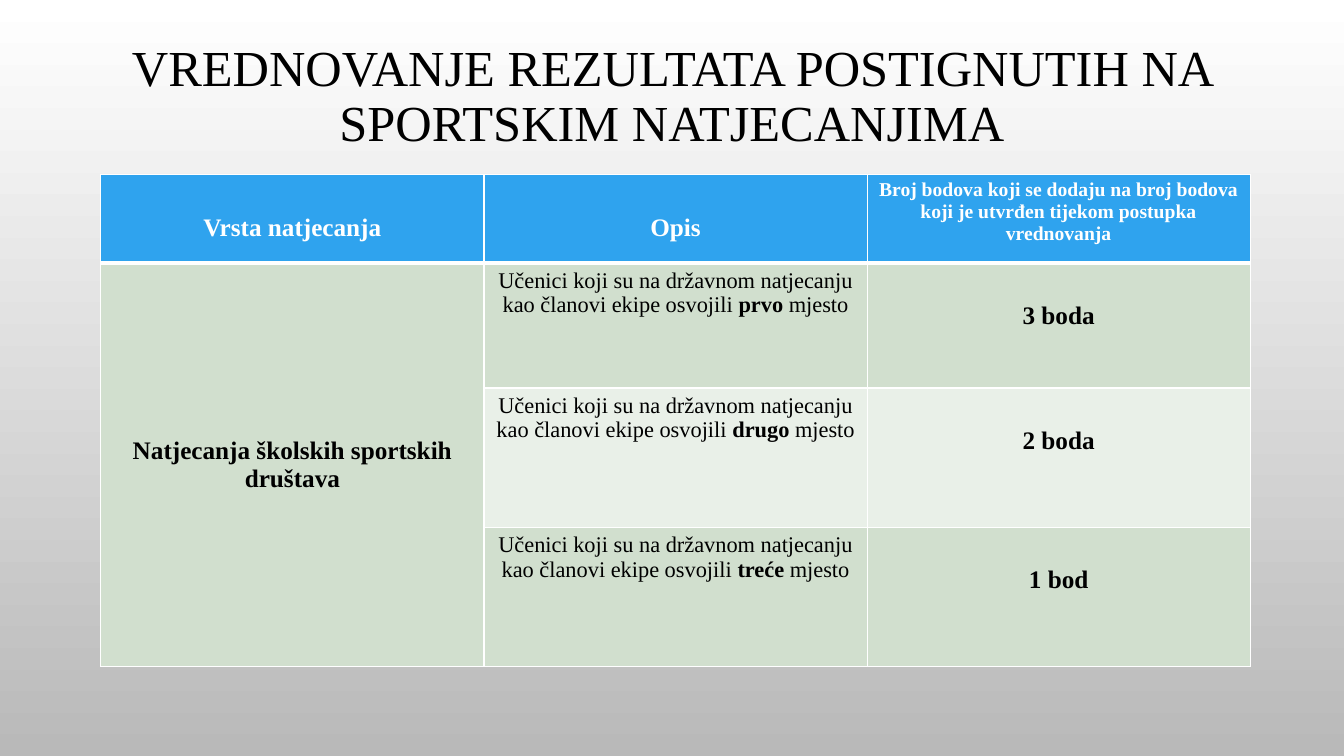
from lxml.etree import SubElement
from pptx import Presentation
from pptx.dml.color import RGBColor
from pptx.enum.text import MSO_ANCHOR, PP_ALIGN
from pptx.oxml.ns import qn
from pptx.util import Inches, Pt

COLORS = {"white": "FFFFFF", "grey": "B9B9B9", "black": "000000",
          "header": "2FA3EE", "band": "D1DFCE", "light": "E9F0E8"}
FONT = "Times New Roman"
ROW_HEIGHTS = [0.88, 1.24, 1.38, 1.38]
HEADERS = [("Vrsta natjecanja", 18, 0.39), ("Opis", 18, 0.39),
           ("Broj bodova koji se dodaju na broj bodova koji je utvrđen "
            "tijekom postupka vrednovanja", 14, 0.05)]
CATEGORY = "Natjecanja školskih sportskih društava"
RESULTS = [("prvo", "3 boda"), ("drugo", "2 boda"), ("treće", "1 bod")]


def rgb(name):
    """Return the named colour."""
    return RGBColor.from_string(COLORS[name])


def write(tf, parts, size, color="black"):
    """Fill a text frame with one centred paragraph of (text, bold) parts."""
    p = tf.paragraphs[0]
    p.alignment = PP_ALIGN.CENTER
    for text, bold in parts:
        r = p.add_run()
        r.text = text
        r.font.name, r.font.size, r.font.bold = FONT, Pt(size), bold
        r.font.color.rgb = rgb(color)
    return p


def style_cell(cell, fill, top=1, bottom=1):
    """Give a cell white borders of the given widths and a solid fill."""
    tcPr = cell._tc.get_or_add_tcPr()
    for side, width in (("L", 1), ("R", 1), ("T", top), ("B", bottom)):
        ln = SubElement(tcPr, qn(f"a:ln{side}"), w=str(Pt(width)))
        solid = SubElement(ln, qn("a:solidFill"))
        SubElement(solid, qn("a:srgbClr"), val=COLORS["white"])
    cell.fill.solid()
    cell.fill.fore_color.rgb = rgb(fill)


def add_background(s):
    """Shade the slide from white at the top to grey at the bottom."""
    fill = s.background.fill
    fill.gradient()
    fill.gradient_angle = 270
    for stop, position, name in zip(fill.gradient_stops, (0, 1), ("white", "grey")):
        stop.position = position
        stop.color.rgb = rgb(name)


def add_title(s, left, top, width, height):
    """Place the slide title in the given box."""
    sp = s.shapes.add_textbox(Inches(left), Inches(top), Inches(width), Inches(height))
    tf = sp.text_frame
    tf.word_wrap = True
    tf.vertical_anchor = MSO_ANCHOR.MIDDLE
    p = write(tf, [("VREDNOVANJE REZULTATA POSTIGNUTIH NA SPORTSKIM NATJECANJIMA", False)], 36)
    p.line_spacing = 0.9


def add_points_table(s, left, top, width, height):
    """Place the table of competition results and points in the given box."""
    frame = s.shapes.add_table(4, 3, Inches(left), Inches(top), Inches(width), Inches(height))
    table = frame.table
    for col in table.columns:
        col.width = Inches(width / 3)
    for row, row_height in zip(table.rows, ROW_HEIGHTS):
        row.height = Inches(row_height)

    for i, (text, size, margin) in enumerate(HEADERS):
        cell = table.cell(0, i)
        style_cell(cell, "header", bottom=3)
        cell.margin_top = Inches(margin)
        write(cell.text_frame, [(text, True)], size, "white")

    category = table.cell(1, 0)
    category.merge(table.cell(3, 0))
    style_cell(category, "band", top=3)
    category.vertical_anchor = MSO_ANCHOR.MIDDLE
    write(category.text_frame, [(CATEGORY, True)], 18)

    for i, (place, points) in enumerate(RESULTS, 1):
        description, score = table.cell(i, 1), table.cell(i, 2)
        for cell in (description, score):
            style_cell(cell, "band" if i % 2 else "light", top=3 if i == 1 else 1)
        write(description.text_frame,
              [("Učenici koji su na državnom natjecanju kao članovi ekipe osvojili ", False),
               (place, True), (" mjesto", False)], 16)
        score.margin_top = Inches(0.39)
        write(score.text_frame, [(points, True)], 18)


def main():
    """Build and save the presentation."""
    prs = Presentation()
    prs.slide_width, prs.slide_height = Inches(13.33), Inches(7.5)
    s = prs.slides.add_slide(prs.slide_layouts[6])
    add_background(s)
    add_title(s, 1, 0.33, 11.33, 1.28)
    add_points_table(s, 1, 1.73, 11.4, sum(ROW_HEIGHTS))
    prs.save("out.pptx")


if __name__ == "__main__":
    main()
